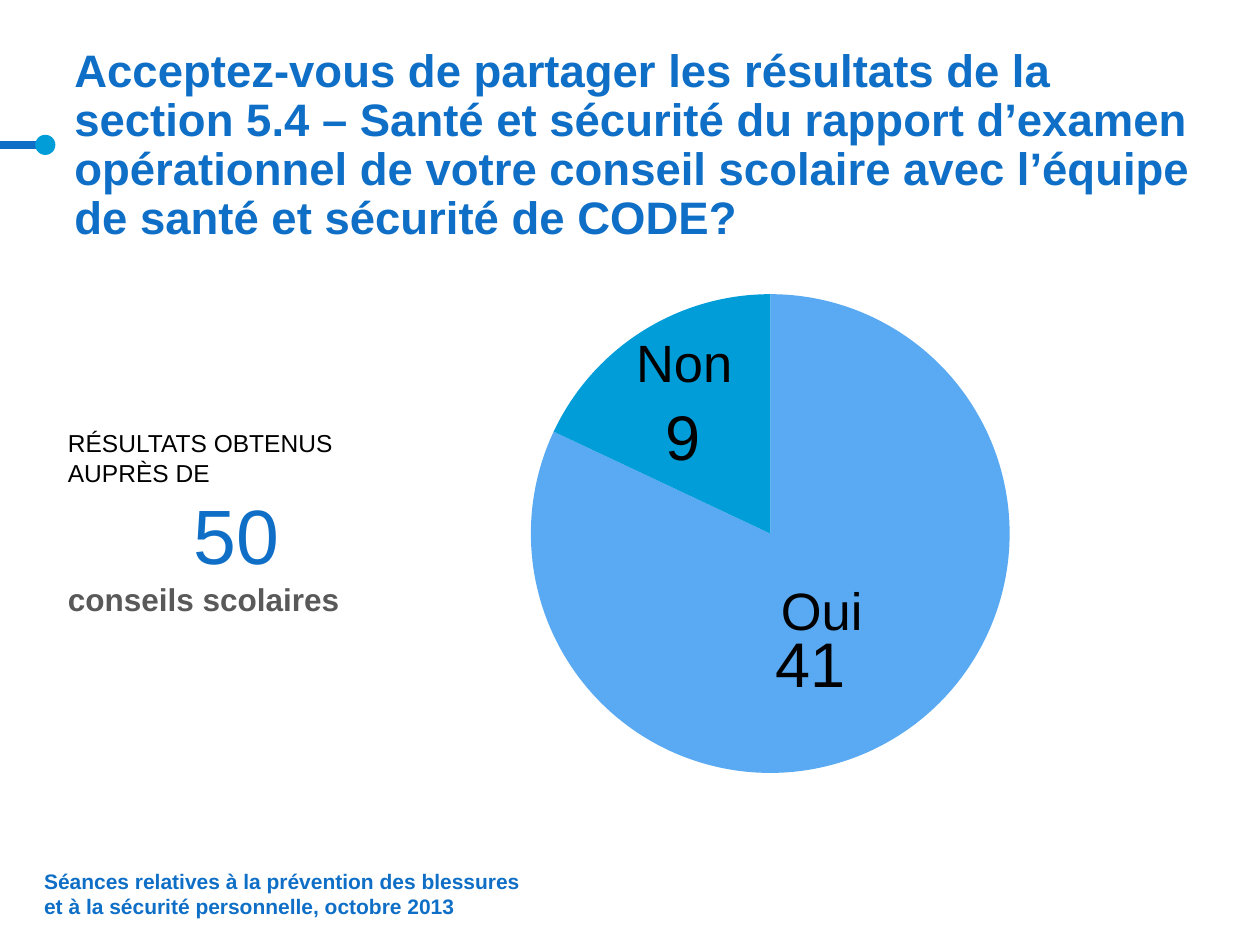
"""Build a survey slide with a pie chart of yes and no answers."""
from dataclasses import dataclass

from lxml.etree import SubElement
from pptx import Presentation
from pptx.chart.data import CategoryChartData
from pptx.dml.color import RGBColor
from pptx.enum.chart import XL_CHART_TYPE, XL_LABEL_POSITION
from pptx.enum.shapes import MSO_CONNECTOR, MSO_SHAPE
from pptx.enum.text import MSO_ANCHOR, PP_ALIGN
from pptx.oxml import parse_xml
from pptx.oxml.ns import nsdecls, qn
from pptx.slide import Slide
from pptx.util import Inches, Pt

BLUE = RGBColor(0x0F, 0x6F, 0xC6)
CYAN = RGBColor(0x00, 0x9D, 0xD9)
SKY = RGBColor(0x59, 0xAA, 0xF2)
GREY = RGBColor(0x59, 0x59, 0x59)
BLACK = RGBColor(0, 0, 0)


@dataclass
class Run:
    text: str
    size: float
    color: RGBColor = BLACK
    bold: bool = False


@dataclass
class Para:
    runs: list[Run]
    align: PP_ALIGN = PP_ALIGN.LEFT
    pitch: float | None = None


@dataclass
class Box:
    area: tuple[float, float, float, float]
    paras: list[Para]
    anchor: MSO_ANCHOR = MSO_ANCHOR.TOP
    inset: tuple[float, float, float, float] = (0.1, 0.05, 0.1, 0.05)


@dataclass
class Slice:
    name: str
    value: int
    color: RGBColor
    shift: tuple[float, float]


BOXES = [
    Box((0.59, 0.36, 9.08, 1.57), [Para([Run(
        "Acceptez-vous de partager les résultats de la section 5.4 – Santé et "
        "sécurité du rapport d’examen opérationnel de votre conseil scolaire "
        "avec l’équipe de santé et sécurité de CODE?", 26, BLUE, True)], pitch=28)],
        MSO_ANCHOR.BOTTOM, (0, 0.05, 0, 0)),
    Box((6.1, 4.54, 0.97, 0.61), [Para([Run("Oui", 30)])]),
    Box((4.95, 2.57, 1.03, 0.61), [Para([Run("Non", 30)])]),
    Box((0.44, 3.35, 2.99, 1.62), [
        Para([Run("RÉSULTATS OBTENUS AUPRÈS DE", 14)]),
        Para([Run("50", 44, BLUE), Run(" ", 30)], PP_ALIGN.CENTER),
        Para([Run("conseils scolaires", 18, GREY, True)])]),
    Box((0.35, 7.03, 3.95, 0.26), [Para([Run(
        "Séances relatives à la prévention des blessures et à la sécurité "
        "personnelle, octobre\u00a02013", 12, BLUE, True)])],
        MSO_ANCHOR.BOTTOM, (0, 0, 0, 0)),
]

SLICES = [Slice("1", 41, SKY, (-0.03, 0.05)), Slice("2", 9, CYAN, (-0.03, 0.01))]


def add_box(slide: Slide, box: Box) -> None:
    frame = slide.shapes.add_textbox(*map(Inches, box.area)).text_frame
    frame.word_wrap = True
    frame.vertical_anchor = box.anchor
    (frame.margin_left, frame.margin_top,
     frame.margin_right, frame.margin_bottom) = map(Inches, box.inset)
    for i, item in enumerate(box.paras):
        para = frame.add_paragraph() if i else frame.paragraphs[0]
        para.alignment = item.align
        if item.pitch:
            para.line_spacing = Pt(item.pitch)
        for part in item.runs:
            run = para.add_run()
            run.text = part.text
            run.font.name = "Arial"
            run.font.size = Pt(part.size)
            run.font.bold = part.bold
            run.font.color.rgb = part.color


def make_layout(**values: float):
    inner = "".join(f'<c:{key} val="{val}"/>' for key, val in values.items())
    return parse_xml(f'<c:layout {nsdecls("c")}><c:manualLayout>{inner}'
                     '</c:manualLayout></c:layout>')


def add_pie(slide: Slide, slices: list[Slice]) -> None:
    data = CategoryChartData()
    data.categories = [s.name for s in slices]
    data.add_series("Series 1", [s.value for s in slices])
    area = map(Inches, (3.03, 1.78, 6.23, 4.96))
    chart = slide.shapes.add_chart(XL_CHART_TYPE.PIE, *area, data).chart
    chart.has_title = chart.has_legend = False
    chart.font.name = "Vollkorn"
    chart.font.size = Pt(18)
    chart.font.color.rgb = BLACK
    plot = chart.plots[0]
    plot.vary_by_categories = True
    area = plot._element.getparent()
    for old in area.findall(qn("c:layout")):
        area.remove(old)
    layout = make_layout(x=0.19, y=0.11, w=0.61, h=0.77)
    manual = layout[0]
    for i, (tag, val) in enumerate(
            (("layoutTarget", "inner"), ("xMode", "edge"), ("yMode", "edge"))):
        node = SubElement(manual, qn(f"c:{tag}"), val=val)
        manual.insert(i, node)
    area.insert(0, layout)
    for i, item in enumerate(slices):
        point = plot.series[0].points[i]
        point.format.fill.solid()
        point.format.fill.fore_color.rgb = item.color
        point.format.line.fill.background()
        label = point.data_label
        label.font.name = "Arial"
        label.font.size = Pt(36)
        label.font.color.rgb = BLACK
        label.position = XL_LABEL_POSITION.CENTER
    for node, item in zip(plot.series[0]._element.iter(qn("c:dLbl")), slices):
        node.insert(1, make_layout(x=item.shift[0], y=item.shift[1]))


def add_mark(slide: Slide) -> None:
    line = slide.shapes.add_connector(
        MSO_CONNECTOR.STRAIGHT, *map(Inches, (0, 1.15, 0.35, 1.15)))
    line.line.color.rgb = BLUE
    line.line.width = Pt(4.75)
    SubElement(line._element.spPr, qn("a:effectLst"))
    dot = slide.shapes.add_shape(
        MSO_SHAPE.OVAL, *map(Inches, (0.28, 1.07, 0.16, 0.16)))
    dot.shadow.inherit = False
    dot.fill.solid()
    dot.fill.fore_color.rgb = CYAN
    dot.line.fill.background()


def main() -> None:
    deck = Presentation()
    deck.slide_width, deck.slide_height = Inches(10), Inches(7.5)
    slide = deck.slides.add_slide(deck.slide_layouts[6])
    add_mark(slide)
    add_pie(slide, SLICES)
    for box in BOXES:
        add_box(slide, box)
    deck.save("out.pptx")


if __name__ == "__main__":
    main()
